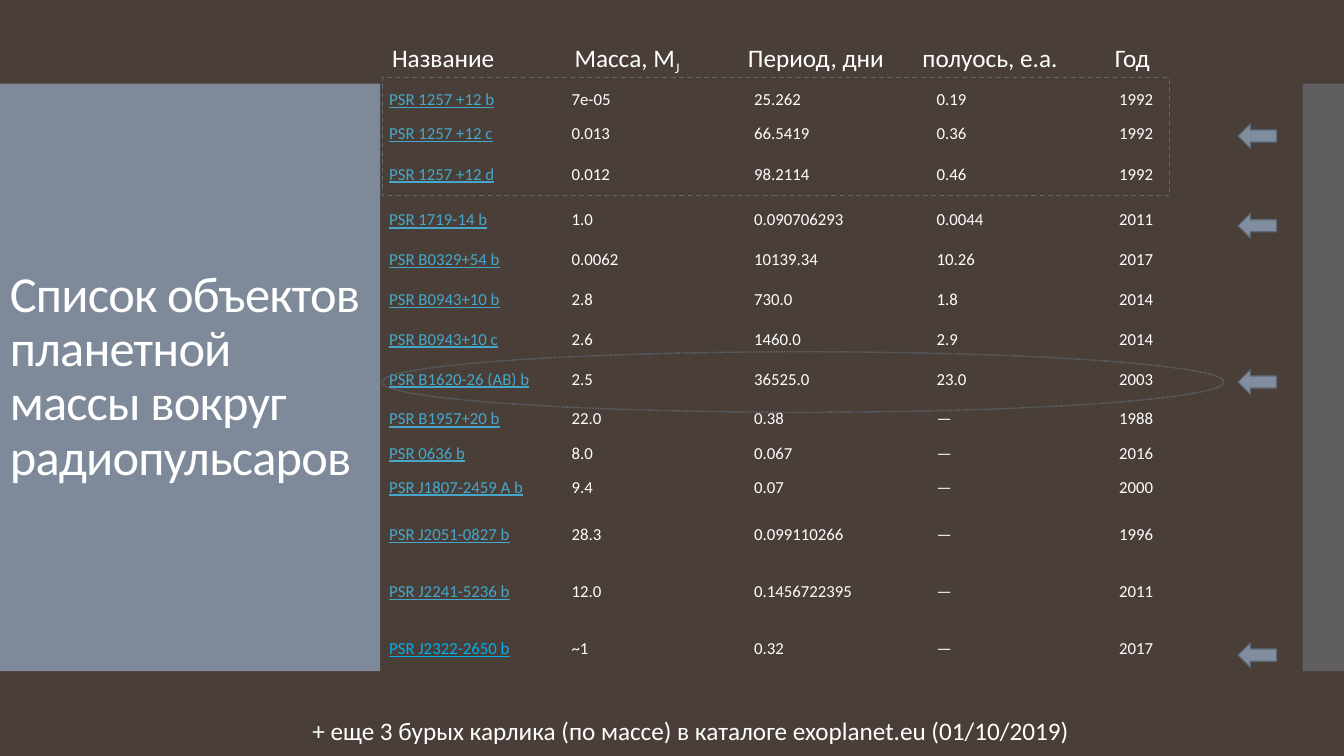
from lxml import etree
from pptx import Presentation
from pptx import util as u
from pptx.dml.color import RGBColor
from pptx.enum import dml, shapes, text
from pptx.oxml.ns import qn

TITLE = "Список объектов планетной массы вокруг радиопульсаров"
HEAD = [("Название\tМасса, M", False), ("J", True),
        ("\tПериод, дни\tполуось, е.а.\tГод", False)]
NOTE = "+ еще 3 бурых карлика (по массе) в каталоге exoplanet.eu (01/10/2019)"
ROWS = [
    (0.34, "PSR 1257 +12 b", "7e-05", "25.262", "0.19", "1992"),
    (0.34, "PSR 1257 +12 c", "0.013", "66.5419", "0.36", "1992"),
    (0.46, "PSR 1257 +12 d", "0.012", "98.2114", "0.46", "1992"),
    (0.45, "PSR 1719-14 b", "1.0", "0.090706293", "0.0044", "2011"),
    (0.34, "PSR B0329+54 b", "0.0062", "10139.34", "10.26", "2017"),
    (0.45, "PSR B0943+10 b", "2.8", "730.0", "1.8", "2014"),
    (0.34, "PSR B0943+10 c", "2.6", "1460.0", "2.9", "2014"),
    (0.45, "PSR B1620-26 (AB) b", "2.5", "36525.0", "23.0", "2003"),
    (0.34, "PSR B1957+20 b", "22.0", "0.38", "—", "1988"),
    (0.34, "PSR 0636 b", "8.0", "0.067", "—", "2016"),
    (0.34, "PSR J1807-2459 A b", "9.4", "0.07", "—", "2000"),
    (0.6, "PSR J2051-0827 b", "28.3", "0.099110266", "—", "1996"),
    (0.53, "PSR J2241-5236 b", "12.0", "0.1456722395", "—", "2011"),
    (0.6, "PSR J2322-2650 b", "~1", "0.32", "—", "2017"),
]
TABS = [1.81, 3.53, 5.26, 7.17]
ARROWS = [1.23, 2.12, 3.67, 6.38]
PANELS = [(0, 3.77, 95), (12.92, 0.42, 40)]
LEFT, TOP, COL = 3.79, 0.82, 1.81
PLAIN = "{2D5ABB26-0587-4C30-8999-92F81FD0307C}"


class Theme:
    font = "Calibri"
    back, panel, edge = "4A3F38", "818E9F", "5F6976"
    ink, link, last = "FFFFFF", "46A7CA", "00B0F0"
    title, body, cell = 36, 18, 12


def paint(fill, tint):
    fill.solid()
    fill.fore_color.rgb = RGBColor.from_string(tint)


def add_run(par, words, size, tint=Theme.ink):
    run = par.add_run()
    run.text = words
    run.font.name = Theme.font
    run.font.size = u.Pt(size)
    run.font.color.rgb = RGBColor.from_string(tint)
    return run


def add_box(slide, area, wrap):
    frame = slide.shapes.add_textbox(*map(u.Inches, area)).text_frame
    frame.word_wrap = wrap
    return frame


def add_form(slide, kind, area, tint=None, width=None, dash=None):
    form = slide.shapes.add_shape(kind, *map(u.Inches, area))
    form.shadow.inherit = False
    if tint:
        paint(form.fill, tint)
    else:
        form.fill.background()
    if width:
        form.line.color.rgb = RGBColor.from_string(Theme.edge)
        form.line.width = u.Pt(width)
        if dash:
            form.line.dash_style = dash
    else:
        form.line.fill.background()
    return form


def add_grid(slide):
    area = (LEFT, TOP, COL * 5, sum(row[0] for row in ROWS))
    grid = slide.shapes.add_table(len(ROWS), 5, *map(u.Inches, area)).table
    grid.first_row = grid.horz_banding = False
    grid._tbl.tblPr.find(qn("a:tableStyleId")).text = PLAIN
    for col in grid.columns:
        col.width = u.Inches(COL)
    for r, (high, *vals) in enumerate(ROWS):
        grid.rows[r].height = u.Inches(high)
        for c, val in enumerate(vals):
            cell = grid.cell(r, c)
            cell.fill.background()
            cell.vertical_anchor = text.MSO_ANCHOR.MIDDLE
            cell.margin_left = cell.margin_right = u.Inches(0.07)
            cell.margin_top = cell.margin_bottom = u.Inches(0.03)
            tint = Theme.ink
            if c == 0:
                tint = Theme.last if r == len(ROWS) - 1 else Theme.link
            run = add_run(cell.text_frame.paragraphs[0], val, Theme.cell, tint)
            run.font.underline = c == 0


def main():
    deck = Presentation()
    deck.slide_width, deck.slide_height = u.Inches(13.33), u.Inches(7.5)
    slide = deck.slides.add_slide(deck.slide_layouts[6])
    paint(slide.background.fill, Theme.back)
    kinds, dashes = shapes.MSO_SHAPE, dml.MSO_LINE

    for x, wide, alpha in PANELS:
        form = add_form(slide, kinds.RECTANGLE, (x, 0.83, wide, 5.83), Theme.panel)
        tone = form._element.spPr.find(qn("a:solidFill"))[0]
        etree.SubElement(tone, qn("a:alpha")).set("val", str(alpha * 1000))

    frame = add_box(slide, (0, 1.23, 3.68, 5.03), True)
    frame.vertical_anchor = text.MSO_ANCHOR.MIDDLE
    par = frame.paragraphs[0]
    par.line_spacing = 0.9
    run = add_run(par, TITLE, Theme.title)
    run.font._element.set("spc", "-60")

    add_grid(slide)

    par = add_box(slide, (LEFT, 0.37, 7.79, 0.4), True).paragraphs[0]
    stops = etree.SubElement(par._p.get_or_add_pPr(), qn("a:tabLst"))
    for stop in TABS:
        tab = etree.SubElement(stops, qn("a:tab"))
        tab.set("pos", str(u.Inches(stop)))
        tab.set("algn", "l")
    for words, low in HEAD:
        run = add_run(par, words, Theme.body)
        if low:
            run.font._element.set("baseline", "-25000")

    add_form(slide, kinds.RECTANGLE, (LEFT, 0.77, 7.81, 1.17),
             width=0.85, dash=dashes.DASH)
    add_form(slide, kinds.OVAL, (LEFT, 3.49, 8.35, 0.6),
             width=1, dash=dashes.ROUND_DOT)
    for y in ARROWS:
        add_form(slide, kinds.LEFT_ARROW, (12.28, y, 0.38, 0.24), Theme.panel, 0.85)

    par = add_box(slide, (3, 7.05, 7.74, 0.4), False).paragraphs[0]
    add_run(par, NOTE, Theme.body)
    deck.save("out.pptx")


if __name__ == "__main__":
    main()
